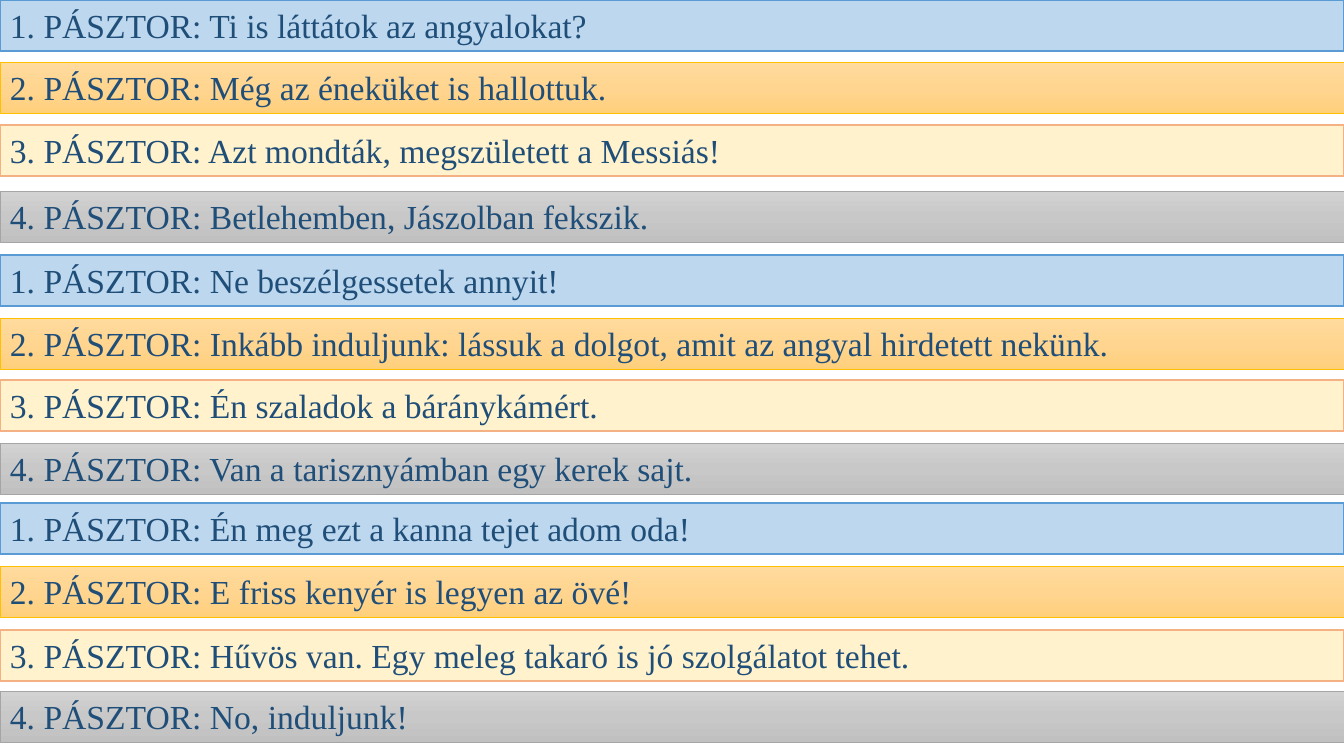
"""Build a slide of shepherds' dialogue lines in coloured bars."""
from copy import deepcopy

from pptx import Presentation
from pptx import util as u
from pptx.dml.color import RGBColor
from pptx.enum import shapes, text
from pptx.oxml.ns import qn

PX = 914400 / 100.8
COLORS = {
    "text": "1F4E79",
    "blue": "BDD7EE", "blue_line": "5B9BD5",
    "gold_top": "FFDB9E", "gold_mid": "FFD590", "gold_end": "FFD07C", "gold_line": "FFC000",
    "cream": "FFF2CC", "cream_line": "F4B183",
    "grey_top": "D2D2D2", "grey_mid": "C8C8C8", "grey_end": "C0C0C0", "grey_line": "A5A5A5",
}
SHEPHERDS = [
    (["blue"], "blue_line", 1),
    (["gold_top", "gold_mid", "gold_end"], "gold_line", 0.5),
    (["cream"], "cream_line", 1),
    (["grey_top", "grey_mid", "grey_end"], "grey_line", 0.5),
]
LINES = [
    (0, "Ti is láttátok az angyalokat?"),
    (62, "Még az éneküket is hallottuk."),
    (125, "Azt mondták, megszületett a Messiás!"),
    (191, "Betlehemben, Jászolban fekszik."),
    (255, "Ne beszélgessetek annyit!"),
    (318, "Inkább induljunk: lássuk a dolgot, amit az angyal hirdetett nekünk."),
    (380, "Én szaladok a báránykámért."),
    (443, "Van a tarisznyámban egy kerek sajt."),
    (503, "Én meg ezt a kanna tejet adom oda!"),
    (566, "E friss kenyér is legyen az övé!"),
    (630, "Hűvös van. Egy meleg takaró is jó szolgálatot tehet."),
    (691, "No, induljunk!"),
]


def px(n):
    return u.Emu(round(n * PX))


def rgb(name):
    return RGBColor.from_string(COLORS[name])


prs = Presentation()
prs.slide_width, prs.slide_height = px(1344), px(756)
s = prs.slides.add_slide(prs.slide_layouts[6])

for i, (top, words) in enumerate(LINES):
    number = i % len(SHEPHERDS)
    fills, line, width = SHEPHERDS[number]
    sp = s.shapes.add_shape(shapes.MSO_SHAPE.RECTANGLE, 0, px(top), px(1344), px(51))
    sp.shadow.inherit = False
    if len(fills) == 1:
        sp.fill.solid()
        sp.fill.fore_color.rgb = rgb(fills[0])
    else:
        sp.fill.gradient()
        sp.fill.gradient_angle = 270
        stops = next(sp._element.iter(qn("a:gsLst")))
        stops.insert(1, deepcopy(stops[0]))
        for stop, name, position in zip(sp.fill.gradient_stops, fills, (0, 0.5, 1)):
            stop.color.rgb = rgb(name)
            stop.position = position
    sp.line.color.rgb = rgb(line)
    sp.line.width = u.Pt(width)

    tf = sp.text_frame
    tf.word_wrap = True
    tf.auto_size = text.MSO_AUTO_SIZE.SHAPE_TO_FIT_TEXT
    tf.vertical_anchor = text.MSO_ANCHOR.TOP
    p = tf.paragraphs[0]
    p.text = f"{number + 1}. PÁSZTOR: {words}"
    p.alignment = text.PP_ALIGN.LEFT
    p.font.name = "Times New Roman"
    p.font.size = u.Pt(24)
    p.font.color.rgb = rgb("text")

prs.save("out.pptx")
